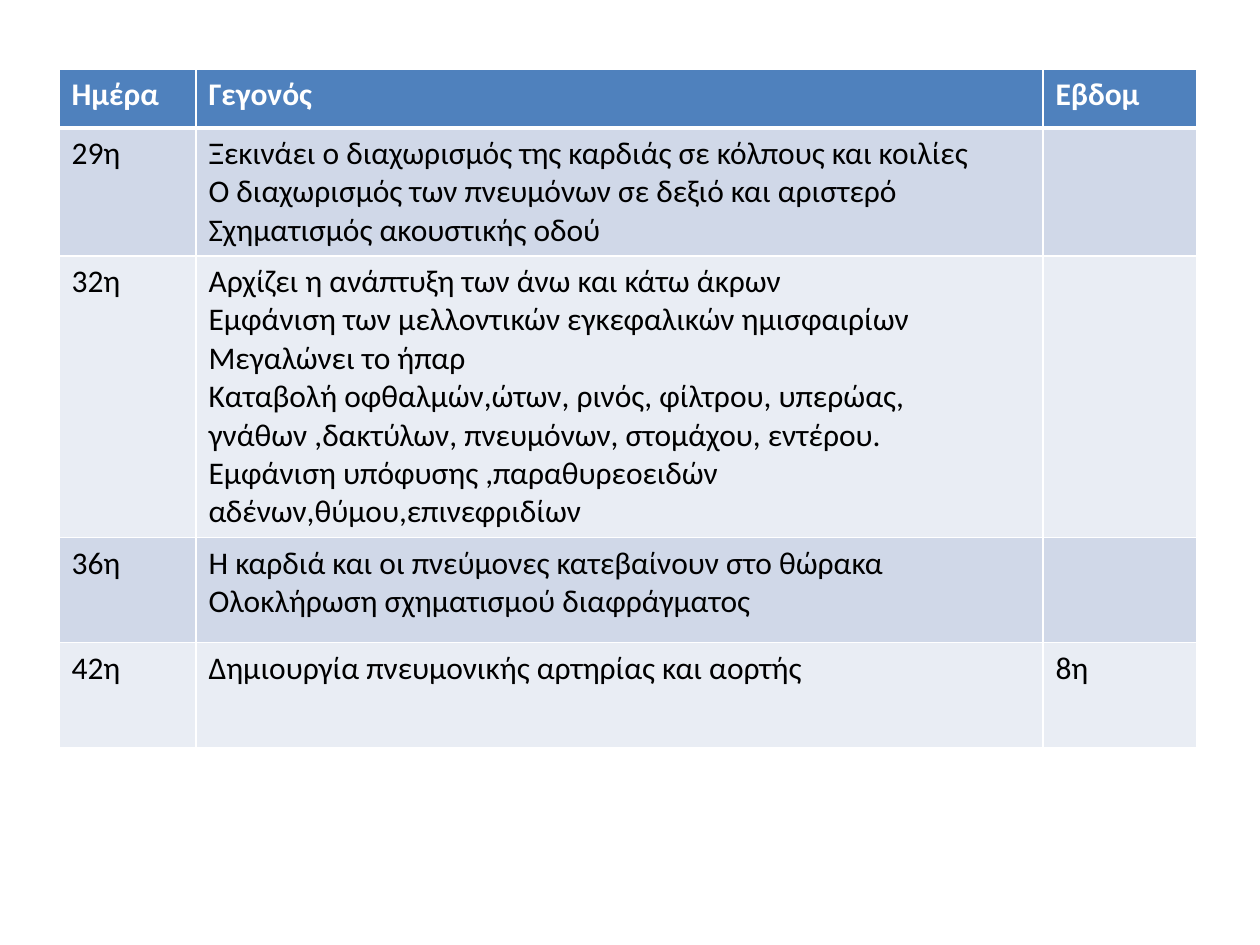
from dataclasses import dataclass

from lxml import etree
from pptx import Presentation
from pptx.dml.color import RGBColor
from pptx.oxml.ns import qn
from pptx.table import _Cell
from pptx.util import Pt

EMU_PER_PX = 914400 // 126
SLIDE_WIDTH, SLIDE_HEIGHT = 1260, 945
TABLE_LEFT, TABLE_TOP, TABLE_HEIGHT = 59, 69, 672
COLUMN_WIDTHS = (137, 847, 154)
HEADER_HEIGHT, BODY_HEIGHT = 59, 105
FONT_NAME = "Calibri"
FONT_SIZE = Pt(18)
THIN, THICK = Pt(1), Pt(3)

WHITE = RGBColor(0xFF, 0xFF, 0xFF)
BLACK = RGBColor(0x00, 0x00, 0x00)
HEADER_BLUE = RGBColor(0x4F, 0x81, 0xBD)
BAND_DARK = RGBColor(0xD0, 0xD8, 0xE8)
BAND_LIGHT = RGBColor(0xE9, 0xED, 0xF4)


@dataclass(frozen=True)
class Event:
    day: str
    lines: tuple[str, ...]
    week: str = ""

    def texts(self) -> tuple[str, str, str]:
        return self.day, "\n".join(self.lines), self.week


@dataclass(frozen=True)
class RowStyle:
    fill: RGBColor
    color: RGBColor
    bold: bool
    top: int
    bottom: int


EVENTS = (
    Event("Ημέρα", ("Γεγονός",), "Εβδομ"),
    Event("29η", (
        "Ξεκινάει ο διαχωρισμός της καρδιάς σε κόλπους και κοιλίες",
        "Ο διαχωρισμός των πνευμόνων σε δεξιό και αριστερό",
        "Σχηματισμός ακουστικής οδού",
    )),
    Event("32η", (
        "Αρχίζει η ανάπτυξη των άνω και κάτω άκρων",
        "Εμφάνιση των μελλοντικών εγκεφαλικών ημισφαιρίων",
        "Μεγαλώνει το ήπαρ",
        "Καταβολή οφθαλμών,ώτων, ρινός, φίλτρου, υπερώας, "
        "γνάθων ,δακτύλων, πνευμόνων, στομάχου, εντέρου.",
        "Εμφάνιση υπόφυσης ,παραθυρεοειδών αδένων,θύμου,επινεφριδίων",
    )),
    Event("36η", (
        "Η καρδιά και οι πνεύμονες κατεβαίνουν στo θώρακα",
        "Ολοκλήρωση σχηματισμού διαφράγματος",
    )),
    Event("42η", ("Δημιουργία πνευμονικής αρτηρίας και αορτής",), "8η"),
)


def px(length: int) -> int:
    return length * EMU_PER_PX


def row_style(index: int) -> RowStyle:
    if index == 0:
        return RowStyle(HEADER_BLUE, WHITE, True, THIN, THICK)
    fill = BAND_DARK if index % 2 else BAND_LIGHT
    return RowStyle(fill, BLACK, False, THICK if index == 1 else THIN, THIN)


def add_borders(cell: _Cell, style: RowStyle) -> None:
    properties = cell._tc.get_or_add_tcPr()
    widths = {"a:lnL": THIN, "a:lnR": THIN, "a:lnT": style.top, "a:lnB": style.bottom}
    for tag, width in widths.items():
        line = etree.SubElement(properties, qn(tag), w=str(int(width)))
        fill = etree.SubElement(line, qn("a:solidFill"))
        etree.SubElement(fill, qn("a:srgbClr"), val=str(WHITE))


def fill_cell(cell: _Cell, text: str, style: RowStyle) -> None:
    add_borders(cell, style)
    cell.fill.solid()
    cell.fill.fore_color.rgb = style.fill
    cell.text_frame.text = text
    for paragraph in cell.text_frame.paragraphs:
        for run in paragraph.runs:
            run.font.name = FONT_NAME
            run.font.size = FONT_SIZE
            run.font.bold = style.bold
            run.font.color.rgb = style.color


def main() -> None:
    presentation = Presentation()
    presentation.slide_width = px(SLIDE_WIDTH)
    presentation.slide_height = px(SLIDE_HEIGHT)
    slide = presentation.slides.add_slide(presentation.slide_layouts[6])
    frame = slide.shapes.add_table(
        len(EVENTS), len(COLUMN_WIDTHS), px(TABLE_LEFT), px(TABLE_TOP),
        px(sum(COLUMN_WIDTHS)), px(TABLE_HEIGHT),
    )
    table = frame.table
    for column, width in zip(table.columns, COLUMN_WIDTHS):
        column.width = px(width)
    for index, (row, event) in enumerate(zip(table.rows, EVENTS)):
        row.height = px(BODY_HEIGHT if index else HEADER_HEIGHT)
        for cell, text in zip(row.cells, event.texts()):
            fill_cell(cell, text, row_style(index))
    frame.height = px(TABLE_HEIGHT)
    presentation.save("out.pptx")


if __name__ == "__main__":
    main()
